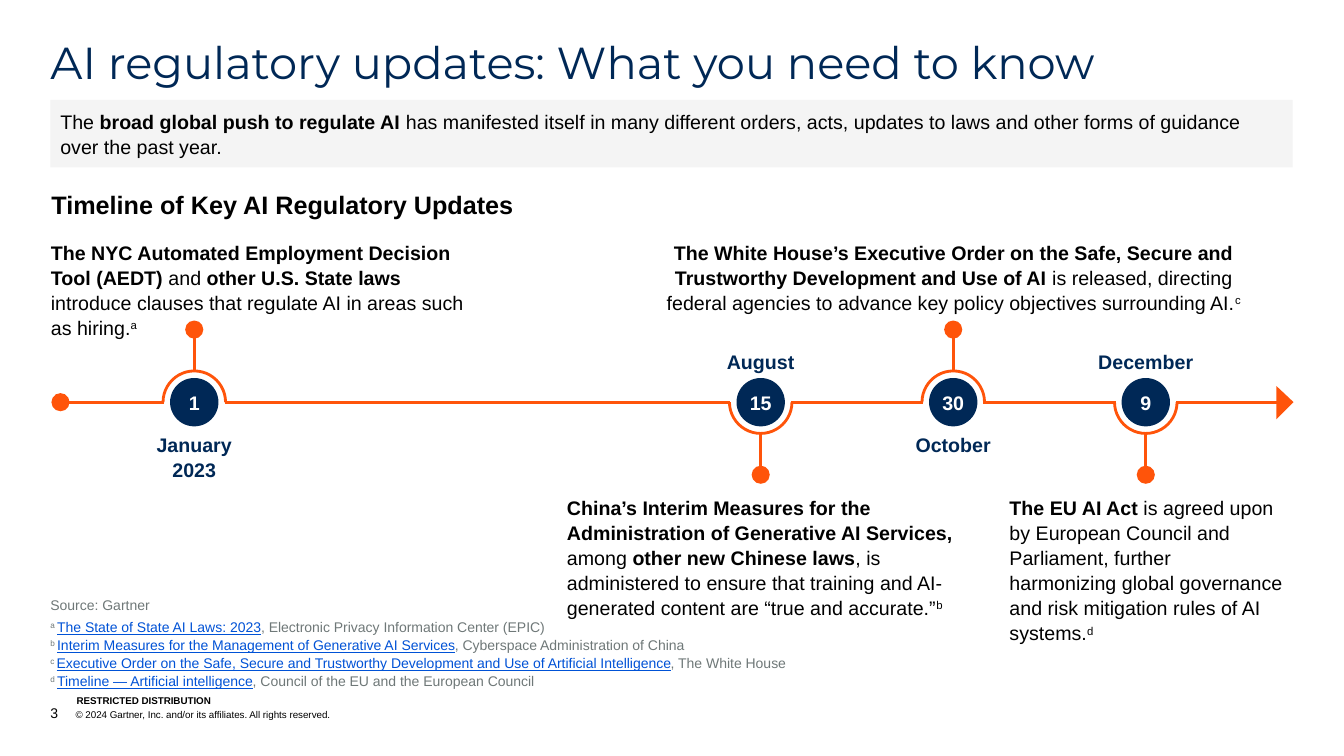
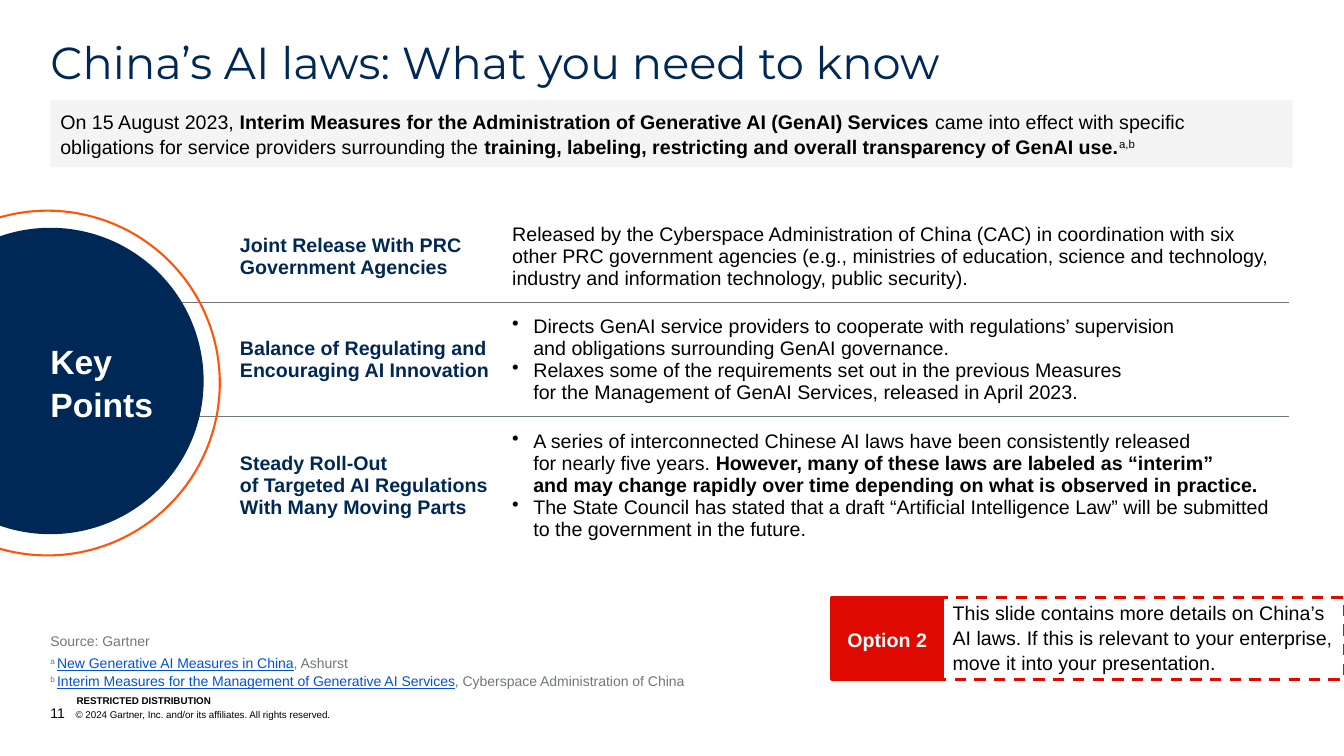
from itertools import pairwise
from lxml import etree
from pptx import Presentation
from pptx.dml.color import RGBColor
from pptx.enum.dml import MSO_LINE
from pptx.enum.shapes import MSO_CONNECTOR, MSO_SHAPE
from pptx.enum.text import MSO_ANCHOR, MSO_AUTO_SIZE, PP_ALIGN
from pptx.oxml.ns import qn
from pptx.util import Inches, Pt

LEFT, CENTER = PP_ALIGN.LEFT, PP_ALIGN.CENTER
TOP, MIDDLE, BOTTOM = MSO_ANCHOR.TOP, MSO_ANCHOR.MIDDLE, MSO_ANCHOR.BOTTOM
RECT, OVAL, ARC = MSO_SHAPE.RECTANGLE, MSO_SHAPE.OVAL, MSO_SHAPE.ARC
DASH, STRAIGHT = MSO_LINE.DASH, MSO_CONNECTOR.STRAIGHT
FIXED = MSO_AUTO_SIZE.NONE

NAVY, ORANGE, RED, GREY = "002856", "FF540A", "DE0A01", "6F7878"
BLACK, WHITE, PALE, BLUE = "000000", "FFFFFF", "F4F4F4", "0052D6"
FONT, HEAD = "Arial", "Montserrat"
WIDE, HIGH = 13.33, 7.5
EDGE, SPAN = 0.5, 12.33
LEAD = 1.07
NO_STYLE = "{2D5ABB26-0587-4C30-8999-92F81FD0307C}"

# Run styles: plain, bold, raised, link, small
STYLES = {
    "": {},
    "b": {"bold": True},
    "r": {},
    "u": {"underline": True},
    "s": {"size": Pt(7)},
}


def color(code):
    return RGBColor.from_string(code)


def put(item, values):
    for name, value in values.items():
        setattr(item, name, value)


def inches(box):
    return [Inches(side) for side in box]


def write(frame, paras, size=14, ink=BLACK, font=FONT, bold=False,
          align=LEFT, lead=LEAD, hang=0, bullet=False, gap=0):
    """Fill a frame; each paragraph is a string or a list of (text, style)."""
    for index, runs in enumerate(paras):
        para = frame.paragraphs[0] if index == 0 else frame.add_paragraph()
        props = para._p.get_or_add_pPr()
        if hang:
            props.set("marL", str(Inches(hang)))
            props.set("indent", str(-Inches(hang)))
        if bullet:
            etree.SubElement(props, qn("a:buChar")).set("char", "•")
        put(para, {"alignment": align, "line_spacing": lead})
        if index == 1 and gap:
            para.space_before = Pt(gap)
        for words, style in [(runs, "")] if isinstance(runs, str) else runs:
            for number, piece in enumerate(words.split("\n")):
                if number:
                    para.add_line_break()
                run = para.add_run()
                run.text = piece
                put(run.font, {"name": font, "size": Pt(size),
                               "bold": bold, **STYLES[style]})
                run.font.color.rgb = color(BLUE if style == "u" else ink)
                if style == "r":
                    run._r.get_or_add_rPr().set("baseline", "30000")


def setup(frame, pad=(0, 0, 0, 0), anchor=TOP):
    left, top, right, bottom = inches(pad)
    put(frame, {"margin_left": left, "margin_top": top,
                "margin_right": right, "margin_bottom": bottom,
                "vertical_anchor": anchor, "word_wrap": True,
                "auto_size": FIXED})
    return frame


def label(slide, box, paras, pad=(0, 0, 0, 0), anchor=TOP, **look):
    area = slide.shapes.add_textbox(*inches(box))
    write(setup(area.text_frame, pad, anchor), paras, **look)


def paint(shape, fill=None, line=None, width=2):
    shape.shadow.inherit = False
    if fill:
        shape.fill.solid()
        shape.fill.fore_color.rgb = color(fill)
    else:
        shape.fill.background()
    if line:
        shape.line.color.rgb = color(line)
        shape.line.width = Pt(width)
    else:
        shape.line.fill.background()
    return shape


def block(slide, kind, box, **look):
    return paint(slide.shapes.add_shape(kind, *inches(box)), **look)


def disc(slide, x, y, radius, **look):
    box = (x - radius, y - radius, 2 * radius, 2 * radius)
    return block(slide, OVAL, box, **look)


def rule(slide, *ends):
    line = slide.shapes.add_connector(STRAIGHT, *inches(ends))
    line.line.color.rgb = color(ORANGE)
    line.line.width = Pt(2)
    etree.SubElement(line._element.spPr, qn("a:effectLst"))


def start(deck, title, page):
    """Add a slide with its title and footer."""
    slide = deck.slides.add_slide(deck.slide_layouts[5])
    head = slide.shapes.title
    put(head, dict(zip(("left", "top", "width", "height"),
                       inches((EDGE, 0.4, SPAN, 0.49)))))
    write(setup(head.text_frame), [title], size=32, ink=NAVY, font=HEAD,
          lead=0.9)
    label(slide, (0.76, 6.89, 2.53, 0.12), ["RESTRICTED DISTRIBUTION"],
          anchor=BOTTOM, size=7, bold=True, lead=1.0)
    legal = "\t© 2024 Gartner, Inc. and/or its affiliates. All rights reserved."
    label(slide, (EDGE, 6.99, 7.99, 0.17), [[(page, ""), (legal, "s")]],
          anchor=BOTTOM, size=10, hang=0.25, lead=1.0)
    return slide


def banner(slide, runs, right=0.1):
    bar = block(slide, RECT, (EDGE, 0.99, 12.32, 0.67), fill=PALE)
    write(setup(bar.text_frame, (0.1, 0.1, right, 0.1), MIDDLE), [runs])


def sources(slide, notes):
    paras = ["Source: Gartner"]
    for mark, (name, owner) in zip("abcd", notes):
        paras.append([(mark + " ", "r"), (name, "u"), (", " + owner, "")])
    tall = 0.33 + 0.16 * len(notes)
    label(slide, (EDGE, 6.84 - tall, 7.95, tall), paras, anchor=BOTTOM,
          pad=(0, 0.1, 0, 0), size=10, ink=GREY, hang=0.1, gap=3)


def event(slide, x, y, day, month, rise):
    """Draw one node, with its stem upwards if rise, else downwards."""
    ring, stem = 0.31, 0.72
    way = -1 if rise else 1
    arc = block(slide, ARC, (x - ring, y - ring, 2 * ring, 2 * ring),
                line=ORANGE)
    arc.adjustments[0], arc.adjustments[1] = (108, 0) if rise else (0, 108)
    rule(slide, x, y + way * stem, x, y + way * ring)
    disc(slide, x, y + way * stem, 0.09, fill=ORANGE)
    dot = disc(slide, x, y, 0.24, fill=NAVY)
    bold = {"bold": True, "align": CENTER}
    write(setup(dot.text_frame, anchor=MIDDLE), [day], ink=WHITE, **bold)
    tall = 0.52
    top = y + 0.24 if rise else y - 0.24 - tall
    label(slide, (x - 0.72, top, 1.44, tall), [month], ink=NAVY,
          pad=(0.1, 0.05, 0.1, 0.05), anchor=TOP if rise else BOTTOM, **bold)


def timeline(slide, box, events):
    left, top, width, height = box
    y, right = top + height / 2, left + width
    spots = [left + share * width for share, *_ in events]
    stops = [left - 0.21, *spots, right + 0.14]
    for a, b in pairwise(stops):
        rule(slide, a + 0.3, y, b - 0.3, y)
    disc(slide, left + 0.09, y, 0.09, fill=ORANGE)
    tip = right - 0.17
    pen = slide.shapes.build_freeform(Inches(tip), Inches(y - 0.16), 1.0)
    pen.add_line_segments([(Inches(tip), Inches(y + 0.17)),
                           (Inches(right), Inches(y))])
    paint(pen.convert_to_shape(), fill=ORANGE)
    for x, (_, day, month, rise, lead, wide, align, runs) in zip(spots, events):
        event(slide, x, y, day, month, rise)
        note = (x - lead, top if rise else y + 0.81, wide, 1.25)
        label(slide, note, [runs], align=align,
              pad=(0.1, 0.2 if rise else 0.1, 0.1, 0))


def grid(slide, box, rows, heights):
    """Lay out headings and points in rows parted by thin lines."""
    table = slide.shapes.add_table(len(rows), 2, *inches(box)).table
    put(table, {"first_row": False, "horz_banding": False})
    table._tbl.tblPr.find(qn("a:tableStyleId")).text = NO_STYLE
    for column, wide in zip(table.columns, (4.5, box[2] - 4.5)):
        column.width = Inches(wide)
    for index, (head, points) in enumerate(rows):
        table.rows[index].height = Inches(heights[index])
        sides = ["a:lnT"] * (index > 0) + ["a:lnB"] * (index < len(rows) - 1)
        listed = len(points) > 1
        looks = ({"ink": NAVY, "bold": True},
                 {"bullet": listed, "hang": 0.21 if listed else 0})
        for column, paras in enumerate(([head], points)):
            cell = table.cell(index, column)
            put(cell, {"margin_left": Inches(0.1 if column else 1.9),
                       "margin_right": Inches(0.1),
                       "margin_top": Inches(0.1),
                       "margin_bottom": Inches(0.1),
                       "vertical_anchor": MIDDLE})
            write(cell.text_frame, paras, lead=1.0, **looks[column])
            props = cell._tc.get_or_add_tcPr()
            for side in sides:
                edge = etree.SubElement(props, qn(side), w=str(Pt(1)))
                fill = etree.SubElement(edge, qn("a:solidFill"))
                etree.SubElement(fill, qn("a:srgbClr"), val=GREY)
            cell.fill.background()


def badge(slide, x, y, words):
    disc(slide, x, y, 1.52, fill=NAVY)
    label(slide, (x, y - 0.4, 1.34, 0.8), [words], anchor=MIDDLE, size=24,
          ink=WHITE, bold=True)
    disc(slide, x - 0.03, y + 0.02, 1.71, line=ORANGE, width=1.5)


def option(slide, box, name, words):
    left, top, width, height = box
    tab = 1.1
    body = block(slide, RECT, (left + tab, top, width - tab, height), line=RED)
    body.line.dash_style = DASH
    write(setup(body.text_frame, (0.1, 0.05, 0.05, 0.05), BOTTOM), [words])
    flag = block(slide, RECT, (left, top, tab, height), fill=RED, line=RED)
    write(setup(flag.text_frame, (0.05,) * 4, MIDDLE), [name], ink=WHITE,
          bold=True, align=CENTER)


EVENTS = [
    (0.115, "1", "January\n2023", True, 1.52, 4.43, LEFT, [
        ("The NYC Automated Employment Decision Tool (AEDT)", "b"),
        (" and ", ""), ("other U.S. State laws", "b"),
        (" introduce clauses that regulate AI in areas such as hiring.", ""),
        ("a", "r")]),
    (0.571, "15", "August", False, 2.02, 4.04, LEFT, [
        ("China’s Interim Measures for the Administration of Generative AI "
         "Services, ", "b"),
        ("among ", ""), ("other new Chinese laws", "b"),
        (", is administered to ensure that training and AI-generated content "
         "are “true and accurate.”", ""), ("b", "r")]),
    (0.726, "30", "October", True, 3.01, 6.03, CENTER, [
        ("The White House’s Executive Order on the Safe, Secure and "
         "Trustworthy Development and Use of AI ", "b"),
        ("is released, directing federal agencies to advance key policy "
         "objectives surrounding AI.", ""), ("c", "r")]),
    (0.881, "9", "December", False, 1.45, 2.91, LEFT, [
        ("The EU AI Act", "b"),
        (" is agreed upon by European Council and Parliament, further "
         "harmonizing global governance and risk mitigation rules of AI "
         "systems.", ""), ("d", "r")]),
]

POINTS = [
    ("Joint Release With PRC Government Agencies", [
        "Released by the Cyberspace Administration of China (CAC) in "
        "coordination with six other PRC government agencies (e.g., "
        "ministries of education, science and technology, industry and "
        "information technology, public security)."]),
    ("Balance of Regulating and Encouraging AI Innovation", [
        "Directs GenAI service providers to cooperate with regulations’ "
        "supervision\nand obligations surrounding GenAI governance.",
        "Relaxes some of the requirements set out in the previous Measures\n"
        "for the Management of GenAI Services, released in April 2023."]),
    ("Steady Roll-Out\nof Targeted AI Regulations With Many Moving Parts", [
        [("A series of interconnected Chinese AI laws have been consistently "
          "released\nfor nearly five years. ", ""),
         ("However, many of these laws are labeled as “interim”\nand may "
          "change rapidly over time depending on what is observed in "
          "practice.", "b")],
        "The State Council has stated that a draft “Artificial Intelligence "
        "Law” will be submitted to the government in the future."]),
]

CHINA = ("Interim Measures for the Management of Generative AI Services",
         "Cyberspace Administration of China")


def updates(deck):
    slide = start(deck, "AI regulatory updates: What you need to know", "3")
    banner(slide, [
        ("The ", ""), ("broad global push to regulate AI", "b"),
        (" has manifested itself in many different orders, acts, updates to "
         "laws and other forms of guidance\nover the past year.", "")])
    label(slide, (0.51, 1.91, 12.32, 0.27),
          ["Timeline of Key AI Regulatory Updates"], size=18, bold=True,
          lead=0.9)
    timeline(slide, (0.51, 2.17, 12.32, 3.64), EVENTS)
    sources(slide, [
        ("The State of State AI Laws: 2023",
         "Electronic Privacy Information Center (EPIC)"),
        CHINA,
        ("Executive Order on the Safe, Secure and Trustworthy Development "
         "and Use of Artificial Intelligence", "The White House"),
        ("Timeline — Artificial intelligence",
         "Council of the EU and the European Council")])


def china(deck):
    slide = start(deck, "China’s AI laws: What you need to know", "11")
    banner(slide, [
        ("On 15 August 2023, ", ""),
        ("Interim Measures for the Administration of Generative AI (GenAI) "
         "Services ", "b"),
        ("came into effect with specific obligations for service providers "
         "surrounding the ", ""),
        ("training, labeling, restricting and overall transparency of GenAI "
         "use.", "b"), ("a,b", "r")], right=0.48)
    grid(slide, (0.48, 2.1, 12.3, 3.4), POINTS, (0.9, 1.13, 1.37))
    badge(slide, EDGE, 3.78, "Key Points")
    option(slide, (8.25, 5.93, WIDE - 8.25, 0.81), "Option 2",
           "This slide contains more details on China’s AI laws. If this is "
           "relevant to your enterprise, move it into your presentation.")
    sources(slide, [("New Generative AI Measures in China", "Ashurst"), CHINA])


def main():
    deck = Presentation()
    put(deck, {"slide_width": Inches(WIDE), "slide_height": Inches(HIGH)})
    updates(deck)
    china(deck)
    deck.save("out.pptx")


if __name__ == "__main__":
    main()
